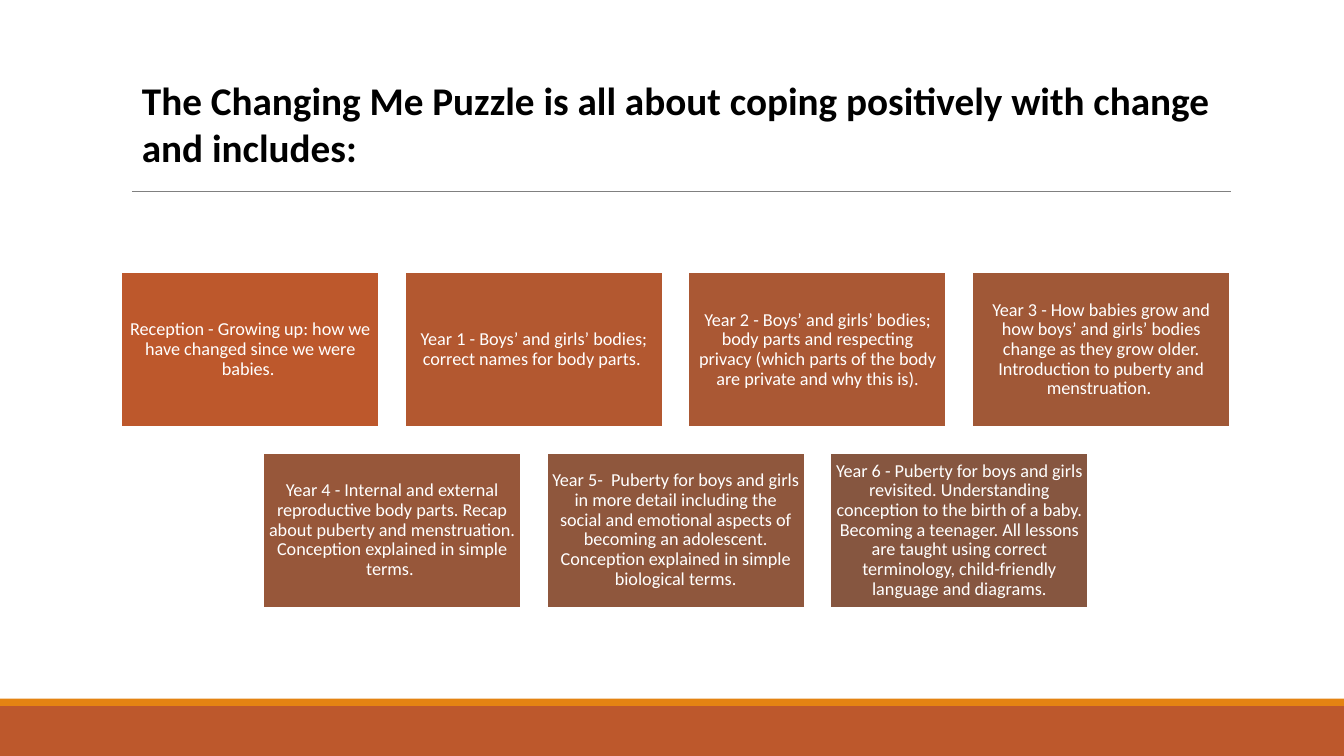
import pptx
import pptx.dml.color
import pptx.enum.shapes
import pptx.enum.text
import pptx.oxml.ns
import pptx.util
from lxml import etree

Pt = pptx.util.Pt
RGBColor = pptx.dml.color.RGBColor
PP_ALIGN = pptx.enum.text.PP_ALIGN
MSO_ANCHOR = pptx.enum.text.MSO_ANCHOR

WHITE = RGBColor(0xFF, 0xFF, 0xFF)
BLACK = RGBColor(0x00, 0x00, 0x00)
GREY = RGBColor(0x80, 0x80, 0x80)
ORANGE = RGBColor(0xE4, 0x83, 0x12)
RUST = RGBColor(0xBD, 0x58, 0x2C)

SLIDE_WIDTH, SLIDE_HEIGHT = 960, 540
CARD_WIDTH, CARD_HEIGHT = 184.2, 110.5
CARD_LEFT, CARD_TOP = 86.6, 194.5
COLUMN_STEP, ROW_STEP = 202.6, 129
FIRST_ROW_COUNT = 4

TITLE = "The Changing Me Puzzle is all about coping positively with change and includes:"
YEARS = [
    (RUST, "Reception - Growing up: how we have changed since we were babies. "),
    (RGBColor(0xB3, 0x58, 0x30),
     "Year 1 - Boys’ and girls’ bodies; correct names for body parts. "),
    (RGBColor(0xAA, 0x58, 0x34),
     "Year 2 - Boys’ and girls’ bodies; body parts and respecting privacy "
     "(which parts of the body are private and why this is)."),
    (RGBColor(0xA0, 0x58, 0x37),
     "Year 3 - How babies grow and how boys’ and girls’ bodies change as they "
     "grow older. Introduction to puberty and menstruation. "),
    (RGBColor(0x97, 0x57, 0x3A),
     "Year 4 - Internal and external reproductive body parts. Recap about "
     "puberty and menstruation. Conception explained in simple terms. "),
    (RGBColor(0x8F, 0x57, 0x3D),
     "Year 5-  Puberty for boys and girls in more detail including the social "
     "and emotional aspects of becoming an adolescent. Conception explained in "
     "simple biological terms."),
    (RGBColor(0x86, 0x56, 0x40),
     "Year 6 - Puberty for boys and girls revisited. Understanding conception to "
     "the birth of a baby. Becoming a teenager. All lessons are taught using "
     "correct terminology, child-friendly language and diagrams."),
]


def apply_format(target, values):
    for name, value in values.items():
        setattr(target, name, value)


class SlideBuilder:
    font_name = "Calibri"

    def __init__(self, slide):
        self.slide = slide

    def add_text(self, shape, text, size, color, bold=False, frame=None, paragraph=None):
        text_frame = shape.text_frame
        apply_format(text_frame, {"word_wrap": True, **(frame or {})})
        first_paragraph = text_frame.paragraphs[0]
        apply_format(first_paragraph, paragraph or {})
        run = first_paragraph.add_run()
        run.text = text
        apply_format(run.font, {"name": self.font_name, "size": Pt(size), "bold": bold})
        run.font.color.rgb = color

    def rectangle(self, left, top, width, height, fill, outline=None):
        shape = self.slide.shapes.add_shape(
            pptx.enum.shapes.MSO_SHAPE.RECTANGLE, Pt(left), Pt(top), Pt(width), Pt(height))
        shape.shadow.inherit = False
        shape.fill.solid()
        shape.fill.fore_color.rgb = fill
        if outline is None:
            shape.line.fill.background()
        else:
            shape.line.color.rgb = outline
            shape.line.width = Pt(1.25)
        return shape

    def card(self, left, top, fill, text):
        shape = self.rectangle(left, top, CARD_WIDTH, CARD_HEIGHT, fill, WHITE)
        margins = {f"margin_{side}": Pt(3.9) for side in ("left", "top", "right", "bottom")}
        self.add_text(shape, text, 13, WHITE,
                      frame={"vertical_anchor": MSO_ANCHOR.MIDDLE, **margins},
                      paragraph={"alignment": PP_ALIGN.CENTER, "line_spacing": 0.9})

    def title(self, left, top, width, height, text):
        box = self.slide.shapes.add_textbox(Pt(left), Pt(top), Pt(width), Pt(height))
        self.add_text(box, text, 28, BLACK, bold=True,
                      frame={"auto_size": pptx.enum.text.MSO_AUTO_SIZE.SHAPE_TO_FIT_TEXT})

    def rule(self, left, right, y):
        connector = self.slide.shapes.add_connector(
            pptx.enum.shapes.MSO_CONNECTOR.STRAIGHT, Pt(left), Pt(y), Pt(right), Pt(y))
        connector.line.color.rgb = GREY
        connector.line.width = Pt(0.5)
        etree.SubElement(connector._element.spPr, pptx.oxml.ns.qn("a:effectLst"))


def main():
    presentation = pptx.Presentation()
    apply_format(presentation, {"slide_width": Pt(SLIDE_WIDTH), "slide_height": Pt(SLIDE_HEIGHT)})
    builder = SlideBuilder(presentation.slides.add_slide(presentation.slide_layouts[6]))

    # Footer bands
    builder.rectangle(0, 504, SLIDE_WIDTH, 36, RUST)
    builder.rectangle(0, 499, SLIDE_WIDTH, 5.2, ORANGE)

    # Title and the rule below it
    builder.rule(94.3, 879, 136.6)
    builder.title(94.3, 51.1, 792, 75, TITLE)

    # Year cards: four above, three below shifted by half a step
    for index, (fill, text) in enumerate(YEARS):
        row, column = divmod(index, FIRST_ROW_COUNT)
        builder.card(CARD_LEFT + (column + row / 2) * COLUMN_STEP,
                     CARD_TOP + row * ROW_STEP, fill, text)

    presentation.save("out.pptx")


if __name__ == "__main__":
    main()
